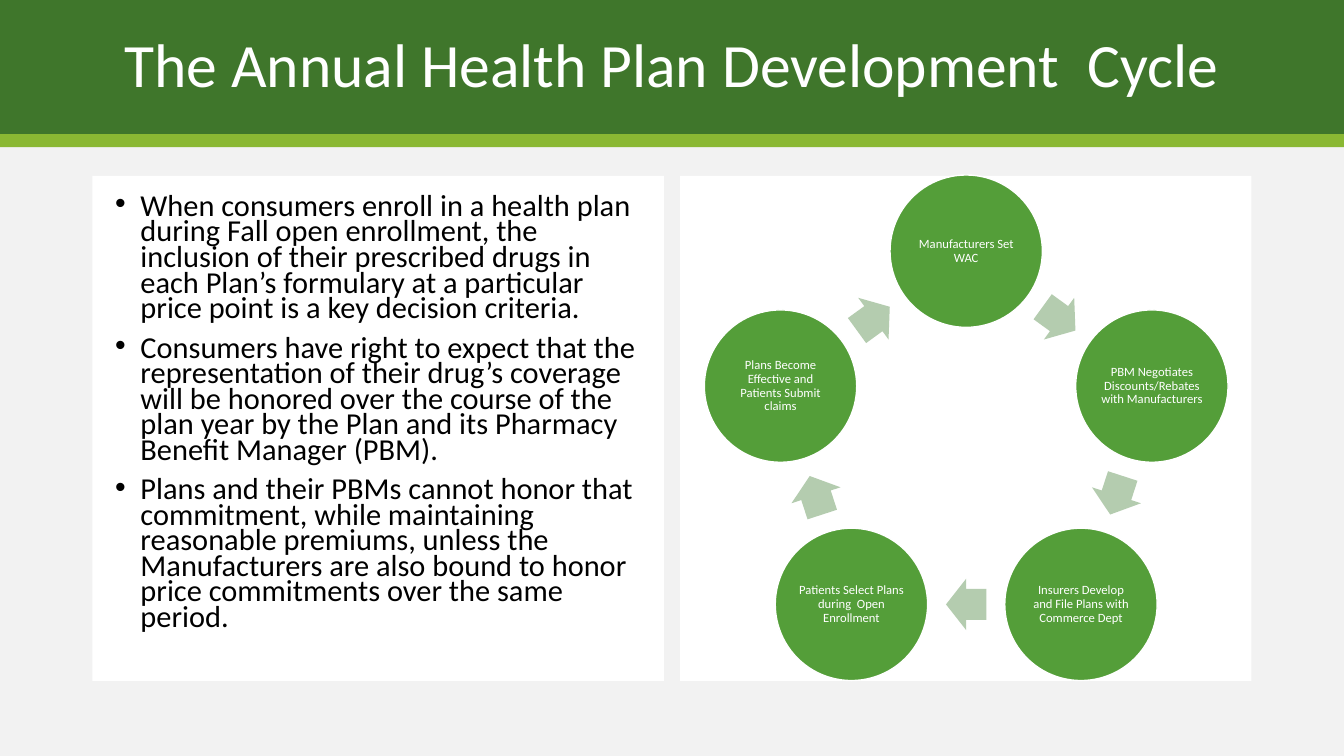
from dataclasses import dataclass
from math import cos, radians, sin

from lxml import etree
from pptx import Presentation
from pptx import util as u
from pptx.dml import color
from pptx.enum import shapes, text

HUES = {
    "page": "F2F2F2", "band": "3F762B", "stripe": "8AB833", "white": "FFFFFF",
    "node": "549E39", "arrow": "B4CCAF", "ink": "000000",
}
FONT = "Calibri"
WIDE, HIGH = 33.87, 19.05
MID_X, MID_Y = 24.35, 11.25  # centre of the cycle
RING = 4.92                  # radius through the circle centres
DISC = 3.84                  # circle diameter

TITLE = "The Annual Health Plan Development  Cycle"
POINTS = [
    "When consumers enroll in a health plan during Fall open enrollment, the inclusion of "
    "their prescribed drugs in each Plan’s formulary at a particular price point is a key "
    "decision criteria.",
    "Consumers have right to expect that the representation of their drug’s coverage will be "
    "honored over the course of the plan year by the Plan and its Pharmacy Benefit Manager "
    "(PBM).",
    "Plans and their PBMs cannot honor that commitment, while maintaining reasonable premiums, "
    "unless the Manufacturers are also bound to honor price commitments over the same period.",
]
STEPS = [
    "Manufacturers Set WAC",
    "PBM Negotiates Discounts/Rebates with Manufacturers",
    "Insurers Develop and File Plans with Commerce Dept",
    "Patients Select Plans during  Open Enrollment",
    "Plans Become Effective and Patients Submit claims",
]


@dataclass
class Box:
    left: float
    top: float
    width: float
    height: float
    hue: str = "white"

    def frame(self) -> list[u.Cm]:
        return [u.Cm(v) for v in (self.left, self.top, self.width, self.height)]


def tint(name: str) -> color.RGBColor:
    return color.RGBColor.from_string(HUES[name])


def draw(home, kind, box: Box, edge: str | None = None):
    shape = home.add_shape(kind, *box.frame())
    shape.shadow.inherit = False
    shape.fill.solid()
    shape.fill.fore_color.rgb = tint(box.hue)
    if edge:
        shape.line.color.rgb = tint(edge)
        shape.line.width = u.Pt(1)
    else:
        shape.line.fill.background()
    return shape


def ring(angle: float, radius: float, width: float, height: float, hue: str) -> Box:
    """Box centred at an angle taken clockwise from the top of the cycle."""
    x = MID_X + radius * sin(radians(angle))
    y = MID_Y - radius * cos(radians(angle))
    return Box(x - width / 2, y - height / 2, width, height, hue)


def write(shape, *lines: str, size: float, hue: str = "white", lead: float = 0.9,
          align=text.PP_ALIGN.CENTER, anchor=text.MSO_ANCHOR.MIDDLE,
          pad=(0.03, 0.03, 0.03, 0.03), gap: float = 0, bullet: bool = False) -> None:
    frame = shape.text_frame
    frame.word_wrap = True
    frame.auto_size = text.MSO_AUTO_SIZE.NONE
    frame.vertical_anchor = anchor
    (frame.margin_left, frame.margin_top,
     frame.margin_right, frame.margin_bottom) = [u.Cm(v) for v in pad]
    for i, line in enumerate(lines):
        para = frame.add_paragraph() if i else frame.paragraphs[0]
        para.alignment = align
        para.line_spacing = lead
        para.space_before = u.Pt(gap)
        run = para.add_run()
        run.text = line
        run.font.name = FONT
        run.font.size = u.Pt(size)
        run.font.color.rgb = tint(hue)
        if bullet:
            mark(para)


def mark(para) -> None:
    """Give a paragraph a round bullet with a hanging indent."""
    props = para._p.get_or_add_pPr()
    props.set("marL", str(u.Cm(0.64)))
    props.set("indent", str(-u.Cm(0.64)))
    space = "{http://schemas.openxmlformats.org/drawingml/2006/main}"
    etree.SubElement(props, space + "buFont", typeface="Arial")
    etree.SubElement(props, space + "buChar", char="•")


def place(holder, box: Box) -> None:
    """Move a placeholder to its box and to the front."""
    holder.left, holder.top, holder.width, holder.height = box.frame()
    holder.element.getparent().append(holder.element)


def main() -> None:
    deck = Presentation()
    deck.slide_width, deck.slide_height = u.Cm(WIDE), u.Cm(HIGH)
    slide = deck.slides.add_slide(deck.slide_layouts[1])
    slide.background.fill.solid()
    slide.background.fill.fore_color.rgb = tint("page")
    kinds = shapes.MSO_SHAPE

    # Header bands and white cards
    for box in (
        Box(0, 0, WIDE, 3.39, "band"),
        Box(0, 3.38, WIDE, 0.33, "stripe"),
        Box(2.33, 4.43, 14.4, 12.73),
        Box(17.14, 4.43, 14.4, 12.73),
    ):
        draw(slide.shapes, kinds.RECTANGLE, box)

    # Title
    title = slide.shapes.title
    place(title, Box(2.33, 0, 29.21, 3.39))
    write(title, TITLE, size=44, pad=(0, 0.13, 0, 0.13))

    # Cycle of steps, each followed by an arrow
    cycle = slide.shapes.add_group_shape().shapes
    turn = 360 / len(STEPS)
    for i, step in enumerate(STEPS):
        disc = draw(cycle, kinds.OVAL, ring(i * turn, RING, DISC, DISC, "node"), "white")
        write(disc, step, size=9)
        angle = (i + 0.5) * turn
        reach = RING * cos(radians(turn / 2))
        arrow = draw(cycle, kinds.RIGHT_ARROW, ring(angle, reach, 1.02, 1.3, "arrow"))
        arrow.adjustments[0] = 0.6
        arrow.adjustments[1] = 0.5
        arrow.rotation = angle

    # Bullet list
    body = slide.placeholders[1]
    place(body, Box(2.39, 4.43, 14.4, 12.73))
    write(body, *POINTS, size=21.7, hue="ink", lead=0.7, gap=10, bullet=True,
          align=text.PP_ALIGN.LEFT, anchor=text.MSO_ANCHOR.TOP, pad=(0.51, 0.51, 0.51, 0.13))

    deck.save("out.pptx")


if __name__ == "__main__":
    main()
